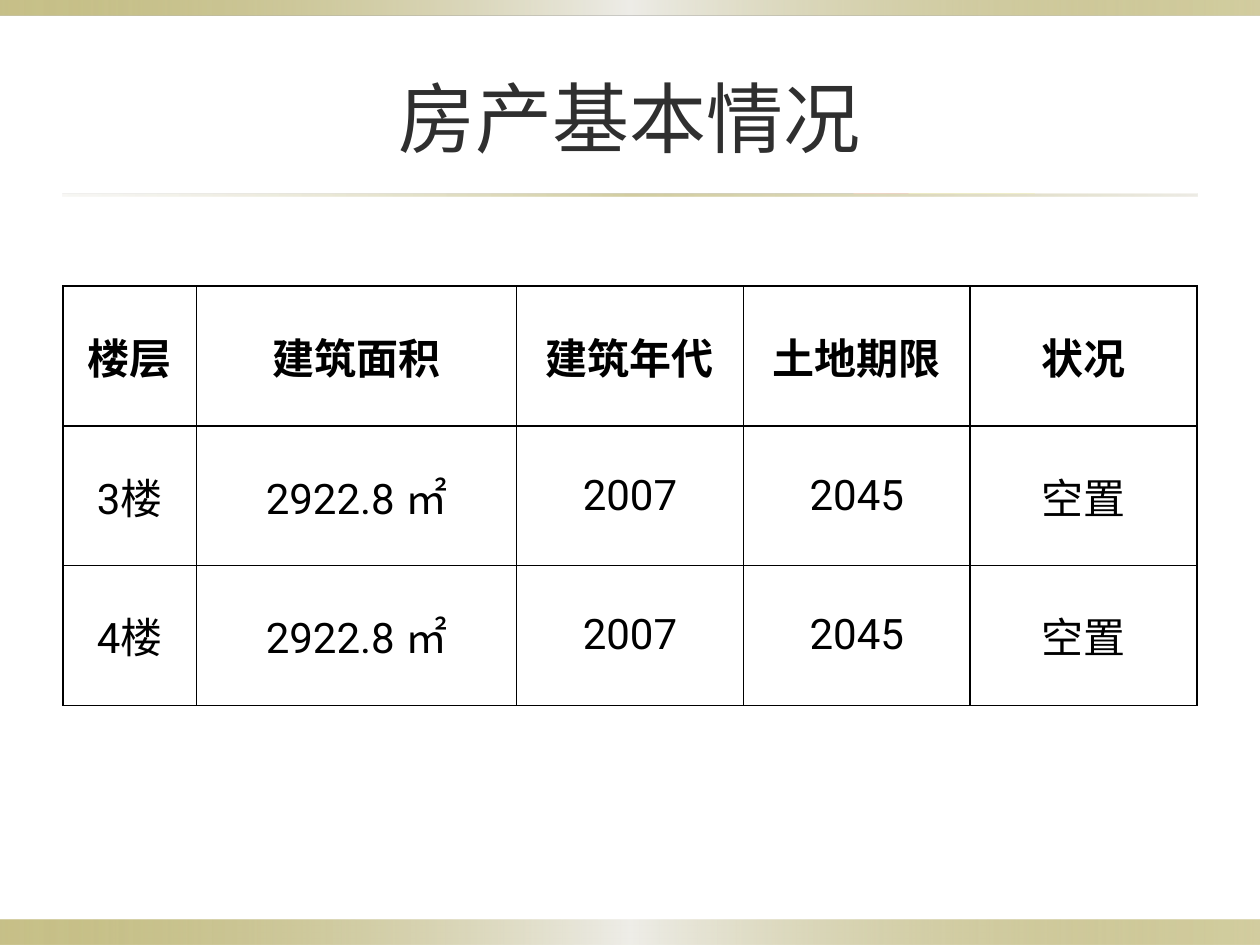
from dataclasses import dataclass

from lxml.etree import SubElement
from pptx import Presentation
from pptx.dml.color import RGBColor
from pptx.enum.shapes import MSO_SHAPE
from pptx.enum.text import MSO_ANCHOR, PP_ALIGN
from pptx.oxml.ns import qn
from pptx.util import Inches, Pt


@dataclass(frozen=True)
class Theme:
    font: str = "Roboto"
    title_color: str = "2F2F2F"
    text_color: str = "000000"
    cell_fill: str = "FFFFFF"
    border_color: str = "000000"
    border_width: float = 1
    title_size: int = 44
    table_size: int = 24
    # Gradient stops: position, colour, opacity (all in percent but the colour)
    band: tuple = ((0, "918415", 50), (50, "EEEDE8", 100), (100, "918415", 40))
    rule: tuple = ((0, "DCD9CC", 20), (50, "918415", 40), (100, "DCD9CC", 50))


THEME = Theme()

TABLE_ROWS = [
    ["楼层", "建筑面积", "建筑年代", "土地期限", "状况"],
    ["3楼", "2922.8 ㎡", "2007", "2045", "空置"],
    ["4楼", "2922.8 ㎡", "2007", "2045", "空置"],
]
COLUMN_WIDTHS = [1.06, 2.54, 1.8, 1.8, 1.8]
ROW_HEIGHT = 1.11


def write_text(tf, text, size, color, bold=False):
    """Put one centred, formatted paragraph into a text frame."""
    p = tf.paragraphs[0]
    p.alignment = PP_ALIGN.CENTER
    r = p.add_run()
    r.text = text
    formats = {"name": THEME.font, "size": Pt(size), "bold": bold}
    for name, value in formats.items():
        setattr(r.font, name, value)
    r.font.color.rgb = RGBColor.from_string(color)


def add_gradient_bar(s, box, stops):
    sp = s.shapes.add_shape(MSO_SHAPE.RECTANGLE, *map(Inches, box))
    sp.shadow.inherit = False
    sp.line.fill.background()
    sp.fill.gradient()
    sp.fill.gradient_angle = 0
    stop_list = sp.element.spPr.find(".//" + qn("a:gsLst"))
    for old_stop in list(stop_list):
        stop_list.remove(old_stop)
    for position, color, opacity in stops:
        stop = SubElement(stop_list, qn("a:gs"), pos=str(position * 1000))
        rgb = SubElement(stop, qn("a:srgbClr"), val=color)
        SubElement(rgb, qn("a:alpha"), val=str(opacity * 1000))


def add_title(s, text):
    title = s.shapes.title
    box = {"left": 0.5, "top": 0.3, "width": 9, "height": 1.25}
    for name, value in box.items():
        setattr(title, name, Inches(value))
    title.text_frame.vertical_anchor = MSO_ANCHOR.MIDDLE
    write_text(title.text_frame, text, THEME.title_size, THEME.title_color)


def set_borders(cell):
    # Border lines must come before the fill in the cell properties
    tcPr = cell._tc.get_or_add_tcPr()
    for index, side in enumerate(("a:lnL", "a:lnR", "a:lnT", "a:lnB")):
        ln = SubElement(tcPr, qn(side), w=str(Pt(THEME.border_width)))
        fill = SubElement(ln, qn("a:solidFill"))
        SubElement(fill, qn("a:srgbClr"), val=THEME.border_color)
        tcPr.insert(index, ln)


def add_property_table(s, rows):
    frame = s.shapes.add_table(
        len(rows), len(COLUMN_WIDTHS), Inches(0.5), Inches(2.27),
        Inches(sum(COLUMN_WIDTHS)), Inches(ROW_HEIGHT * len(rows)))
    table = frame.table
    table.horz_banding = False
    for column, width in zip(table.columns, COLUMN_WIDTHS):
        column.width = Inches(width)
    for i, texts in enumerate(rows):
        table.rows[i].height = Inches(ROW_HEIGHT)
        for j, text in enumerate(texts):
            cell = table.cell(i, j)
            cell.vertical_anchor = MSO_ANCHOR.MIDDLE
            cell.fill.solid()
            cell.fill.fore_color.rgb = RGBColor.from_string(THEME.cell_fill)
            set_borders(cell)
            write_text(cell.text_frame, text, THEME.table_size,
                       THEME.text_color, bold=i == 0)


def main():
    prs = Presentation()
    prs.slide_width, prs.slide_height = Inches(10), Inches(7.5)
    s = prs.slides.add_slide(prs.slide_layouts[5])

    # Bottom and top bands, rule under the title
    add_gradient_bar(s, (0, 7.3, 10, 0.2), THEME.band)
    add_gradient_bar(s, (0, 0, 10, 0.12), THEME.band)
    add_gradient_bar(s, (0.5, 1.54, 9, 0.02), THEME.rule)

    # Title and table
    add_title(s, "房产基本情况")
    add_property_table(s, TABLE_ROWS)

    prs.save("out.pptx")


if __name__ == "__main__":
    main()
